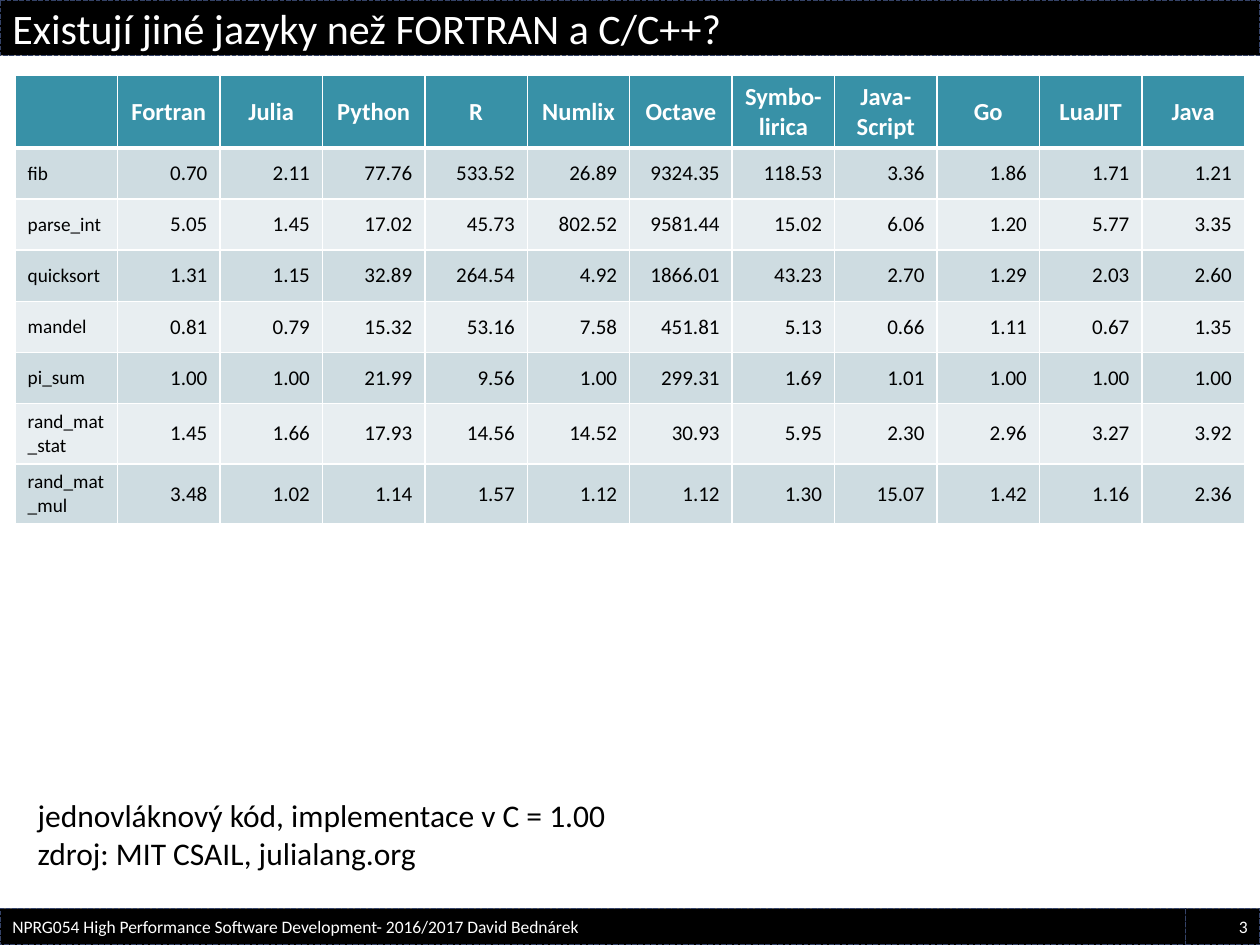
"""Build a slide comparing benchmark times of programming languages with C."""
from dataclasses import dataclass

from lxml.etree import SubElement
from pptx import Presentation
from pptx.dml.color import RGBColor
from pptx.enum.dml import MSO_LINE
from pptx.enum.shapes import MSO_SHAPE
from pptx.enum.text import MSO_ANCHOR, PP_ALIGN
from pptx.oxml.ns import qn
from pptx.util import Inches, Pt

FONT = "Calibri"
BLACK = RGBColor(0x00, 0x00, 0x00)
WHITE = RGBColor(0xFF, 0xFF, 0xFF)
BAR_LINE = RGBColor(0x35, 0x43, 0x68)
HEADER = RGBColor(0x38, 0x91, 0xA7)
BANDS = (RGBColor(0xCE, 0xDC, 0xE1), RGBColor(0xE8, 0xEE, 0xF1))

LANGUAGES = ("Fortran", "Julia", "Python", "R", "Numlix", "Octave",
             "Symbo-lirica", "Java-Script", "Go", "LuaJIT", "Java")


@dataclass
class Bar:
    text: str
    left: float
    top: float
    width: float
    height: float
    size: int
    align: PP_ALIGN = PP_ALIGN.LEFT


@dataclass
class Benchmark:
    name: str
    times: tuple[float, ...]


BARS = (
    Bar("Existují jiné jazyky než FORTRAN a C/C++?", 0, 0, 10, 0.44, 24),
    Bar("3", 9.41, 7.21, 0.59, 0.29, 10, PP_ALIGN.RIGHT),
    Bar("NPRG054 High Performance Software Development- 2016/2017 David Bednárek",
        0, 7.21, 9.41, 0.29, 10),
)

BENCHMARKS = (
    Benchmark("fib", (0.70, 2.11, 77.76, 533.52, 26.89, 9324.35, 118.53, 3.36, 1.86, 1.71, 1.21)),
    Benchmark("parse_int", (5.05, 1.45, 17.02, 45.73, 802.52, 9581.44, 15.02, 6.06, 1.20, 5.77, 3.35)),
    Benchmark("quicksort", (1.31, 1.15, 32.89, 264.54, 4.92, 1866.01, 43.23, 2.70, 1.29, 2.03, 2.60)),
    Benchmark("mandel", (0.81, 0.79, 15.32, 53.16, 7.58, 451.81, 5.13, 0.66, 1.11, 0.67, 1.35)),
    Benchmark("pi_sum", (1.00, 1.00, 21.99, 9.56, 1.00, 299.31, 1.69, 1.01, 1.00, 1.00, 1.00)),
    Benchmark("rand_mat_stat", (1.45, 1.66, 17.93, 14.56, 14.52, 30.93, 5.95, 2.30, 2.96, 3.27, 3.92)),
    Benchmark("rand_mat_mul", (3.48, 1.02, 1.14, 1.57, 1.12, 1.12, 1.30, 15.07, 1.42, 1.16, 2.36)),
)


def style_text(tf, size: int, color: RGBColor, align: PP_ALIGN = PP_ALIGN.LEFT,
               bold: bool = False) -> None:
    for p in tf.paragraphs:
        p.alignment = align
        p.font.size = Pt(size)
        for r in p.runs:
            r.font.name = FONT
            r.font.size = Pt(size)
            r.font.bold = bold
            r.font.color.rgb = color


def draw_bar(s, bar: Bar) -> None:
    sp = s.shapes.add_shape(MSO_SHAPE.RECTANGLE, Inches(bar.left), Inches(bar.top),
                            Inches(bar.width), Inches(bar.height))
    sp.shadow.inherit = False
    sp.fill.solid()
    sp.fill.fore_color.rgb = BLACK
    sp.line.color.rgb = BAR_LINE
    sp.line.width = Pt(0.9)
    sp.line.dash_style = MSO_LINE.SQUARE_DOT
    tf = sp.text_frame
    tf.text = bar.text
    tf.vertical_anchor = MSO_ANCHOR.MIDDLE
    style_text(tf, bar.size, WHITE, bar.align)


def set_borders(cell, top: int, bottom: int) -> None:
    tcPr = cell._tc.get_or_add_tcPr()
    for side, width in (("L", 1), ("R", 1), ("T", top), ("B", bottom)):
        ln = SubElement(tcPr, qn(f"a:ln{side}"), w=str(Pt(width)))
        fill = SubElement(ln, qn("a:solidFill"))
        SubElement(fill, qn("a:srgbClr"), val=str(WHITE))


def draw_cell(cell, text: str, row: int, col: int) -> None:
    set_borders(cell, 3 if row == 1 else 1, 3 if row == 0 else 1)
    cell.fill.solid()
    cell.fill.fore_color.rgb = HEADER if row == 0 else BANDS[(row - 1) % 2]
    cell.vertical_anchor = MSO_ANCHOR.MIDDLE
    cell.text_frame.text = text
    if row == 0:
        style_text(cell.text_frame, 14, WHITE, PP_ALIGN.CENTER, True)
    elif col == 0:
        style_text(cell.text_frame, 11, BLACK)
    else:
        style_text(cell.text_frame, 12, BLACK, PP_ALIGN.RIGHT)


def draw_table(s) -> None:
    rows = [("", *LANGUAGES)]
    rows += [(b.name, *(f"{t:.2f}" for t in b.times)) for b in BENCHMARKS]
    table = s.shapes.add_table(len(rows), len(rows[0]), Inches(0.12), Inches(0.6),
                               Inches(9.76), Inches(3.25)).table
    for i, row in enumerate(rows):
        for j, text in enumerate(row):
            draw_cell(table.cell(i, j), text, i, j)


def draw_note(s) -> None:
    sp = s.shapes.add_textbox(Inches(0.2), Inches(6.27), Inches(9.69), Inches(0.71))
    tf = sp.text_frame
    tf.word_wrap = True
    tf.text = "jednovláknový kód, implementace v C = 1.00\nzdroj: MIT CSAIL, julialang.org"
    style_text(tf, 18, BLACK)


def main() -> None:
    prs = Presentation()
    prs.slide_width, prs.slide_height = Inches(10), Inches(7.5)
    s = prs.slides.add_slide(prs.slide_layouts[6])
    for bar in BARS:
        draw_bar(s, bar)
    draw_table(s)
    draw_note(s)
    prs.save("out.pptx")


if __name__ == "__main__":
    main()
